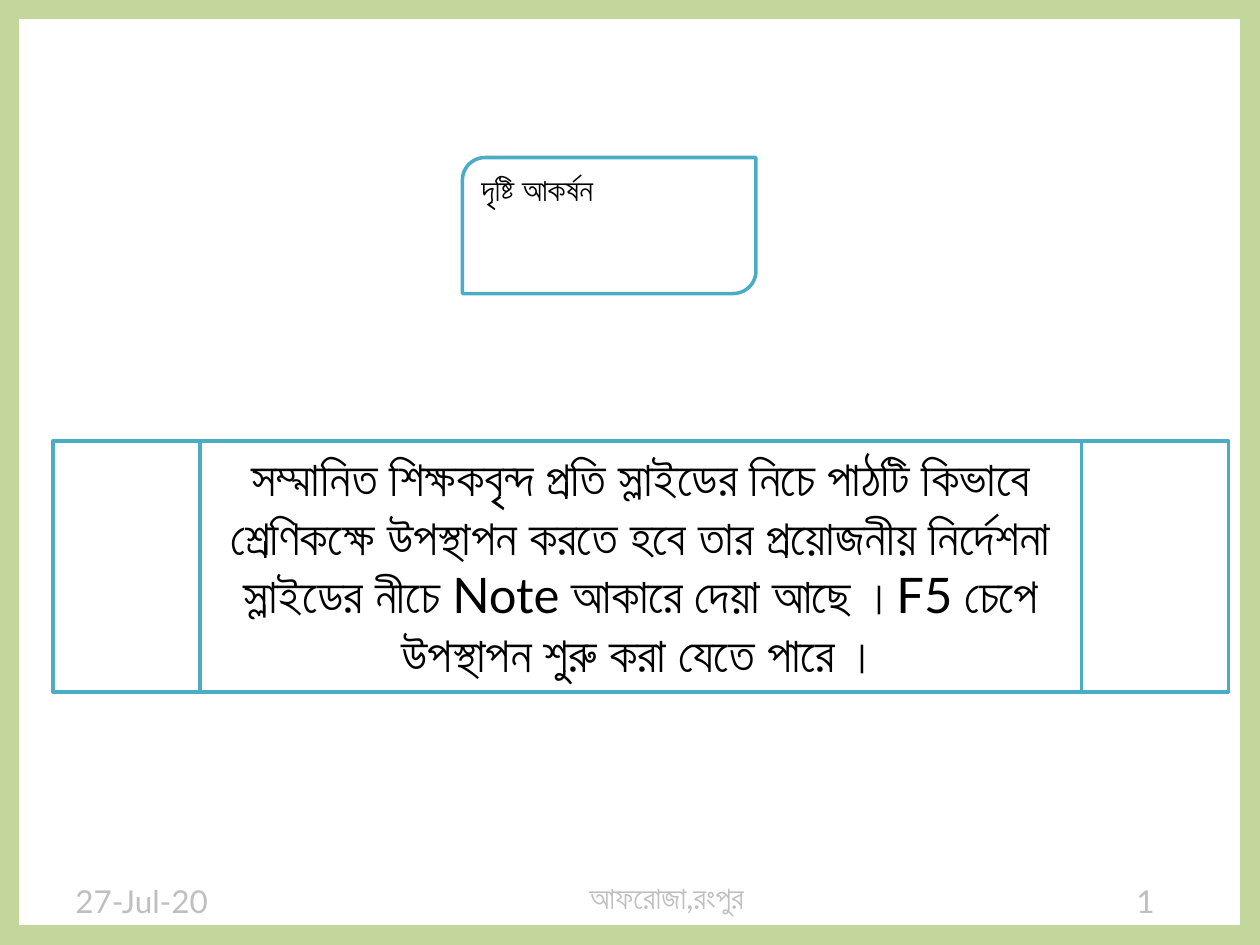
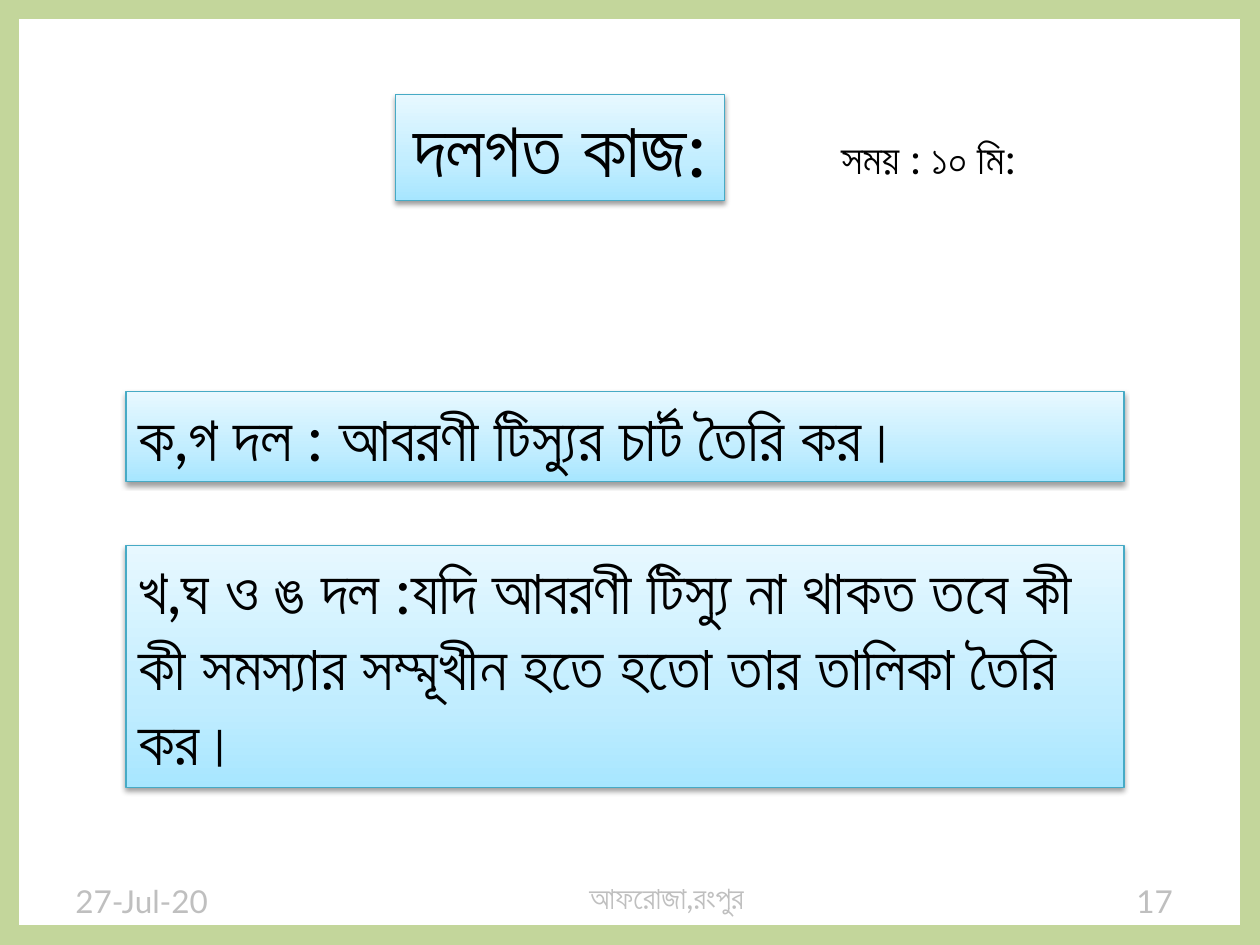
"""Build two Bengali lesson slides with a green frame and a shared footer."""
from copy import deepcopy

from lxml import etree
from pptx import Presentation
from pptx.dml.color import RGBColor
from pptx.enum.shapes import MSO_SHAPE
from pptx.enum.text import MSO_ANCHOR, MSO_AUTO_SIZE, PP_ALIGN
from pptx.oxml.ns import qn
from pptx.util import Inches, Pt

RECT = MSO_SHAPE.RECTANGLE
PANEL = MSO_SHAPE.FLOWCHART_PREDEFINED_PROCESS
LEAF = MSO_SHAPE.ROUND_2_DIAG_RECTANGLE
GROW = MSO_AUTO_SIZE.SHAPE_TO_FIT_TEXT
TOP = MSO_ANCHOR.TOP
LEFT, CENTER = PP_ALIGN.LEFT, PP_ALIGN.CENTER
FONT = "Lato"
COLORS = {
    "frame": "C3D69B", "foot": "BFBFBF", "text": "000000", "paper": "FFFFFF",
    "teal": "4BACC6", "edge": "46AAC5",
    "deep": "A7E6FF", "mid": "C1EDFF", "pale": "E7F8FF",
}
STOPS = ((0, "deep"), (0.35, "mid"), (1, "pale"))


def rgb(name):
    return RGBColor.from_string(COLORS[name])


class Deck:
    def __init__(self):
        self.prs = Presentation()
        self.prs.slide_width, self.prs.slide_height = Inches(10), Inches(7.5)
        self.slide = None

    def page(self, number):
        self.slide = self.prs.slides.add_slide(self.prs.slide_layouts[6])
        frame = self.shape(RECT, (0, 0, 10, 7.5), "frame", 22.25)
        frame.fill.background()
        for text, box in (
            ("27-Jul-20", (0.5, 6.95, 1.33, 0.4)),
            ("আফরোজা,রংপুর", (4.58, 6.92, 1.75, 0.4)),
            (str(number), (8.92, 6.95, 0.58, 0.4)),
        ):
            self.label(text, box, 18, "foot")

    def shape(self, kind, box, line, width):
        shape = self.slide.shapes.add_shape(kind, *map(Inches, box))
        shape.shadow.inherit = False
        shape.line.color.rgb = rgb(line)
        shape.line.width = Pt(width)
        return shape

    def letter(self, shape, text, size, align=LEFT, color="text", wrap=True):
        frame = shape.text_frame
        frame.word_wrap = wrap
        frame.vertical_anchor = TOP
        para = frame.paragraphs[0]
        para.text, para.alignment = text, align
        para.font.name, para.font.size = FONT, Pt(size)
        para.font.color.rgb = rgb(color)

    def label(self, text, box, size, color="text"):
        shape = self.slide.shapes.add_textbox(*map(Inches, box))
        self.letter(shape, text, size, color=color)

    def card(self, kind, text, box, size, align=LEFT):
        shape = self.shape(kind, box, "teal", 2)
        shape.fill.solid()
        shape.fill.fore_color.rgb = rgb("paper")
        self.letter(shape, text, size, align)
        shape.text_frame.auto_size = GROW

    def banner(self, text, box, size, align=LEFT, wrap=True):
        shape = self.shape(RECT, box, "edge", 0.75)
        self.shade(shape)
        self.drop(shape)
        self.letter(shape, text, size, align, wrap=wrap)
        shape.text_frame.auto_size = GROW

    def shade(self, shape):
        fill = shape.fill
        fill.gradient()
        fill.gradient_angle = 90
        stops = shape._element.spPr.find(".//" + qn("a:gsLst"))
        stops.append(deepcopy(stops[-1]))
        for stop, (place, name) in zip(fill.gradient_stops, STOPS):
            stop.position = place
            stop.color.rgb = rgb(name)

    def drop(self, shape):
        effects = shape._element.spPr.find(qn("a:effectLst"))
        shadow = etree.SubElement(
            effects, qn("a:outerShdw"), blurRad=str(Pt(3.1)),
            dist=str(Pt(1.6)), dir="5400000", rotWithShape="0")
        color = etree.SubElement(shadow, qn("a:srgbClr"), val=COLORS["text"])
        etree.SubElement(color, qn("a:alpha"), val="38000")


def main():
    deck = Deck()

    deck.page(1)
    deck.card(
        PANEL,
        "সম্মানিত শিক্ষকবৃন্দ প্রতি স্লাইডের নিচে পাঠটি কিভাবে শ্রেণিকক্ষে "
        "উপস্থাপন করতে হবে তার প্রয়োজনীয় নির্দেশনা স্লাইডের নীচে Note আকারে "
        "দেয়া আছে ।F5 চেপে উপস্থাপন শুরু করা যেতে পারে ।",
        (0.42, 3.5, 9.33, 1.99), 28, CENTER)
    deck.card(LEAF, "দৃষ্টি আকর্ষন", (3.67, 1.25, 2.33, 1.08), 18)

    deck.page(17)
    deck.banner("দলগত কাজ:", (3.14, 0.75, 2.61, 0.84), 44, CENTER, False)
    deck.banner("ক,গ দল : আবরণী টিস্যুর চার্ট তৈরি কর।",
                (1, 3.11, 7.92, 0.71), 36)
    deck.label("সময় : ১০ মি:", (6.58, 1, 2.08, 0.5), 24)
    deck.banner(
        "খ,ঘ ও ঙ দল :যদি আবরণী টিস্যু না থাকত তবে কী কী সমস্যার "
        "সম্মূখীন হতে হতো তার তালিকা তৈরি কর।",
        (1, 4.33, 7.92, 1.92), 36)

    deck.prs.save("out.pptx")


if __name__ == "__main__":
    main()
